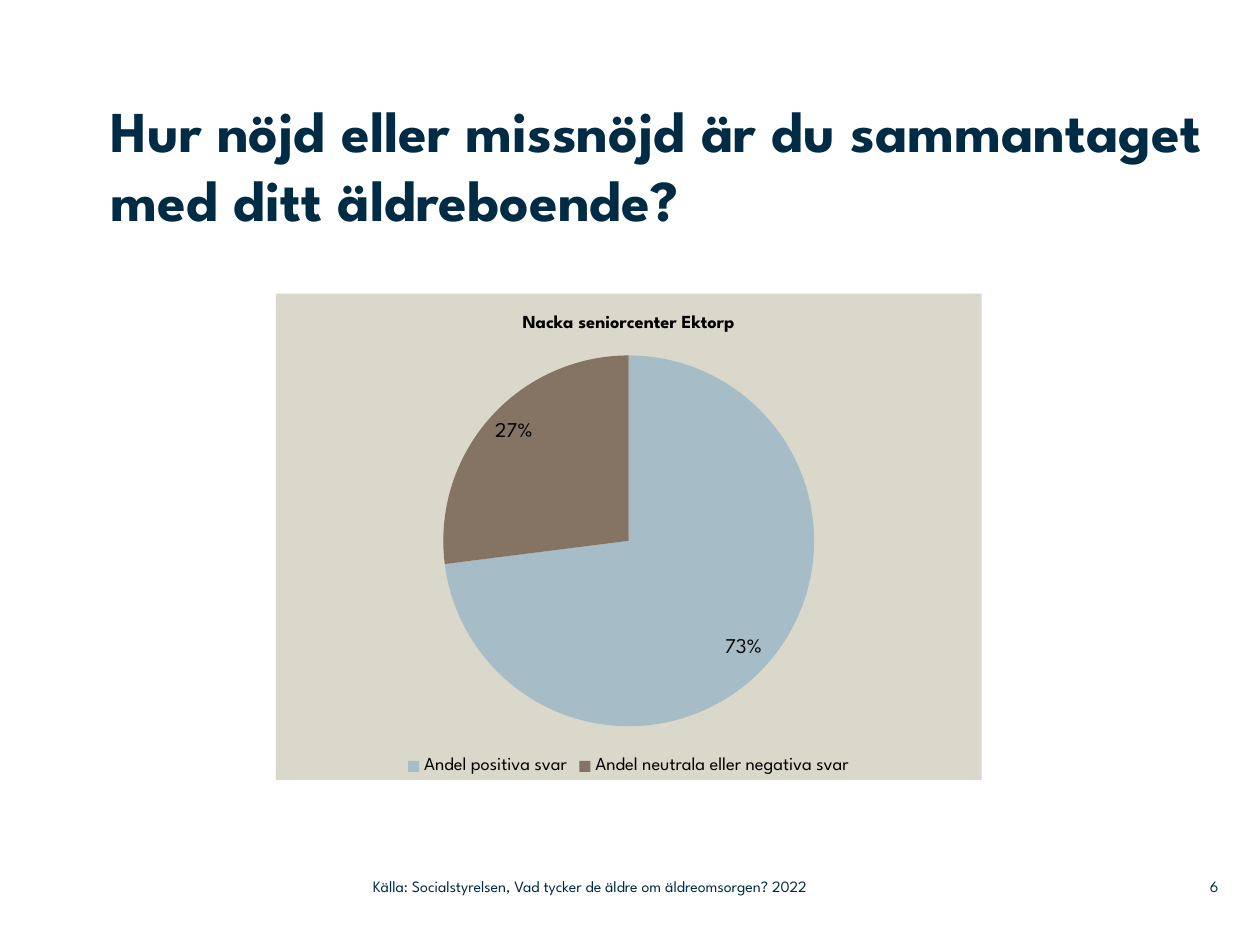
from pptx import Presentation
from pptx.chart.data import CategoryChartData
from pptx.dml.color import RGBColor
from pptx.enum.chart import XL_CHART_TYPE, XL_LABEL_POSITION, XL_LEGEND_POSITION
from pptx.enum.text import MSO_ANCHOR, PP_ALIGN
from pptx.oxml import parse_xml
from pptx.oxml.ns import nsdecls
from pptx.util import Inches, Pt

FONT = "League Spartan"
HUES = {"navy": "002B45", "black": "000000", "sand": "DAD7CB",
        "blue": "A6BCC6", "brown": "857363"}
SHARES = {"Andel positiva svar": 73, "Andel neutrala eller negativa svar": 27}


def hue(name):
    """Return a named colour."""
    return RGBColor.from_string(HUES[name])


def style(font, size, color, bold=False):
    """Set the look of a font."""
    font.name = FONT
    font.size = Pt(size)
    font.bold = bold
    font.color.rgb = hue(color)


def add_text(slide, box, text, size, bold=False,
             anchor=MSO_ANCHOR.MIDDLE, align=PP_ALIGN.LEFT):
    """Add a text box without margins."""
    frame = slide.shapes.add_textbox(*map(Inches, box)).text_frame
    frame.word_wrap = True
    frame.vertical_anchor = anchor
    frame.margin_left = frame.margin_right = 0
    frame.margin_top = frame.margin_bottom = 0
    para = frame.paragraphs[0]
    para.text = text
    para.alignment = align
    style(para.font, size, "navy", bold)


def add_pie(slide, box, title, shares):
    """Add a pie chart with percent labels and a legend."""
    data = CategoryChartData()
    data.categories = list(shares)
    data.add_series("Series 1", list(shares.values()))
    chart = slide.shapes.add_chart(
        XL_CHART_TYPE.PIE, *map(Inches, box), data).chart
    style(chart.font, 18, "black")
    chart.has_title = True
    para = chart.chart_title.text_frame.paragraphs[0]
    para.text = title
    style(para.font, 10.5, "black", True)
    chart.has_legend = True
    chart.legend.position = XL_LEGEND_POSITION.BOTTOM
    chart.legend.include_in_layout = False
    style(chart.legend.font, 10.5, "black")
    plot = chart.plots[0]
    plot.vary_by_categories = True
    for spot, name in enumerate(("blue", "brown")):
        fill = plot.series[0].points[spot].format.fill
        fill.solid()
        fill.fore_color.rgb = hue(name)
    plot.has_data_labels = True
    labels = plot.data_labels
    labels.show_percentage = True
    labels.show_value = False
    labels.number_format = "0%"
    labels.number_format_is_linked = False
    labels.position = XL_LABEL_POSITION.INSIDE_END
    style(labels.font, 12, "black")
    fill_back(chart, "sand")


def fill_back(chart, name):
    """Fill the chart background and drop its border."""
    look = parse_xml(
        f'<c:spPr {nsdecls("c", "a")}><a:solidFill><a:srgbClr val="{HUES[name]}"/>'
        '</a:solidFill><a:ln><a:noFill/></a:ln></c:spPr>')
    chart.element.chart.addnext(look)


def main():
    """Build and save the slide."""
    deck = Presentation()
    deck.slide_width, deck.slide_height = Inches(10), Inches(7.5)
    slide = deck.slides.add_slide(deck.slide_layouts[6])
    add_text(slide, (0.88, 0.75, 8.83, 1.42),
             "Hur nöjd eller missnöjd är du sammantaget med ditt äldreboende?",
             33, True, MSO_ANCHOR.TOP)
    add_text(slide, (2.96, 6.89, 4.43, 0.29),
             "Källa: Socialstyrelsen, Vad tycker de äldre om äldreomsorgen? 2022", 9)
    add_pie(slide, (2.19, 2.33, 5.6, 3.86), "Nacka seniorcenter Ektorp", SHARES)
    add_text(slide, (9.2, 6.89, 0.47, 0.29), "6", 9, align=PP_ALIGN.RIGHT)
    deck.save("out.pptx")


if __name__ == "__main__":
    main()
